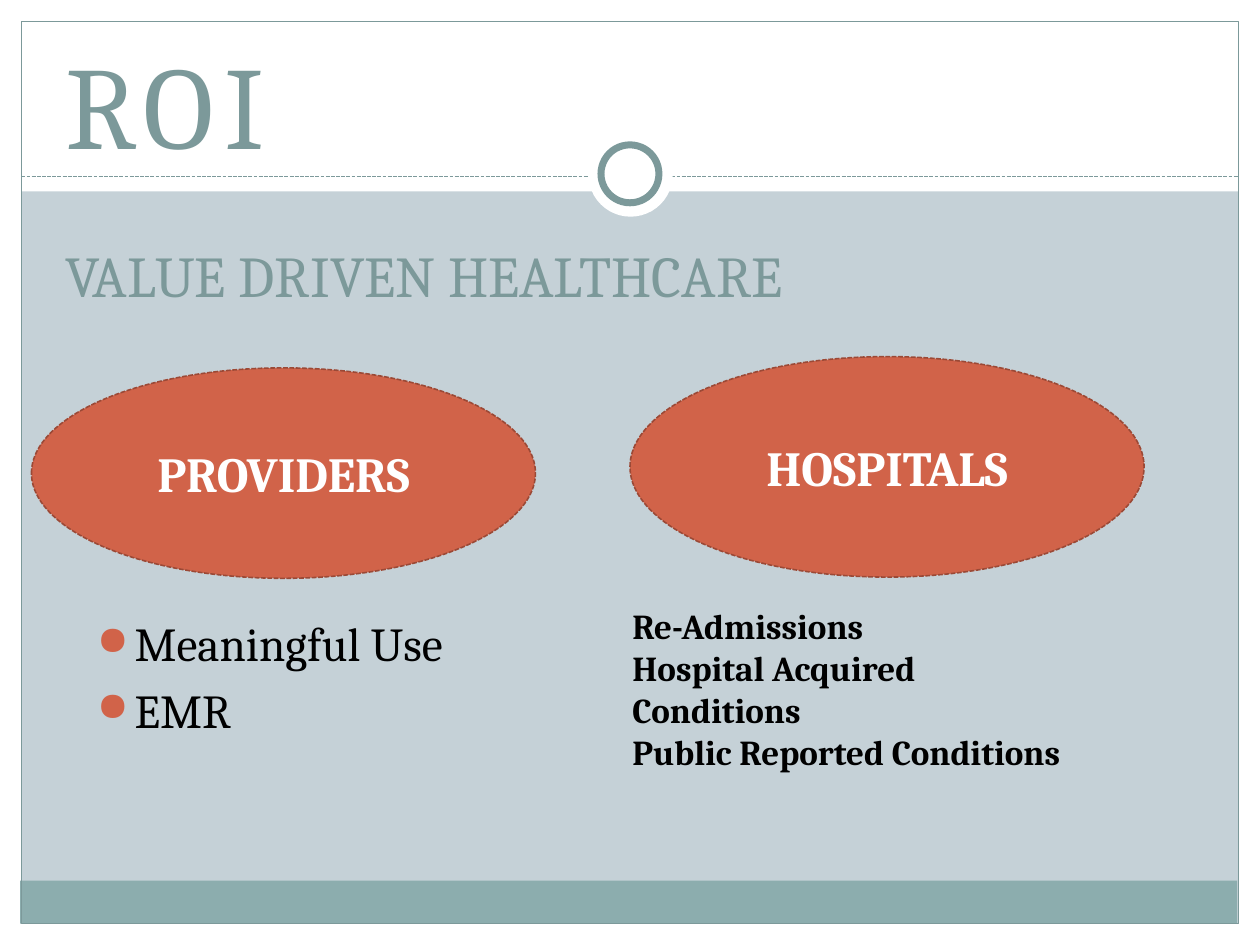
import pptx
import pptx.util
import pptx.dml.color
import pptx.enum.dml
import pptx.enum.shapes
import pptx.enum.text
import pptx.oxml
import pptx.oxml.ns

Inches = pptx.util.Inches
Pt = pptx.util.Pt
Shape = pptx.enum.shapes.MSO_SHAPE
Anchor = pptx.enum.text.MSO_ANCHOR
Align = pptx.enum.text.PP_ALIGN

COLORS = {
    "background": "C5D1D7",
    "white": "FFFFFF",
    "black": "000000",
    "teal": "7C999A",
    "footer": "8CADAE",
    "orange": "D16349",
    "rust": "9B4936",
}


class SlideBuilder:
    font = "Cambria"

    def __init__(self, slide):
        self.slide = slide
        slide.background.fill.solid()
        slide.background.fill.fore_color.rgb = self.color("background")

    def color(self, name):
        return pptx.dml.color.RGBColor.from_string(COLORS[name])

    def outline(self, line, color, width, dashed=False):
        line.color.rgb = self.color(color)
        line.width = Pt(width)
        if dashed:
            line.dash_style = pptx.enum.dml.MSO_LINE.SQUARE_DOT

    def shape(self, kind, box, fill=None, line=None):
        shape = self.slide.shapes.add_shape(kind, *map(Inches, box))
        shape.shadow.inherit = False
        if fill:
            shape.fill.solid()
            shape.fill.fore_color.rgb = self.color(fill)
        else:
            shape.fill.background()
        if line:
            self.outline(shape.line, *line)
        else:
            shape.line.fill.background()
        return shape

    def divider(self, left, right, top):
        connector = self.slide.shapes.add_connector(
            pptx.enum.shapes.MSO_CONNECTOR.STRAIGHT,
            Inches(left), Inches(top), Inches(right), Inches(top))
        self.outline(connector.line, "teal", 0.75, True)
        properties = connector._element.spPr
        properties.append(pptx.oxml.parse_xml(
            f'<a:effectLst {pptx.oxml.ns.nsdecls("a")}/>'))

    def paragraph(self, frame, text, size, color, bold=False,
                  align=Align.LEFT, before=0, spacing=0):
        paragraph = frame.paragraphs[0]
        if paragraph.runs:
            paragraph = frame.add_paragraph()
        paragraph.alignment = align
        paragraph.space_before = Pt(before)
        run = paragraph.add_run()
        run.text = text
        run.font.name = self.font
        run.font.size = Pt(size)
        run.font.bold = bold
        run.font.color.rgb = self.color(color)
        if spacing:
            run.font._element.set("spc", str(spacing * 100))
        return paragraph

    def text_box(self, box, anchor=Anchor.TOP):
        frame = self.slide.shapes.add_textbox(*map(Inches, box)).text_frame
        frame.word_wrap = True
        frame.vertical_anchor = anchor
        return frame

    def bullet(self, frame, text):
        paragraph = self.paragraph(frame, text, 27, "black", before=5.4)
        properties = paragraph._element.get_or_add_pPr()
        properties.set("marL", str(Inches(0.3)))
        properties.set("indent", str(-Inches(0.3)))
        namespace = pptx.oxml.ns.nsdecls("a")
        for xml in (
            f'<a:buClr {namespace}><a:srgbClr val="{COLORS["orange"]}"/></a:buClr>',
            f'<a:buSzPct {namespace} val="85000"/>',
            f'<a:buChar {namespace} char="●"/>',
        ):
            properties.append(pptx.oxml.parse_xml(xml))

    def oval(self, box, text):
        shape = self.shape(Shape.OVAL, box, "orange", ("rust", 0.9, True))
        frame = shape.text_frame
        frame.word_wrap = True
        frame.vertical_anchor = Anchor.MIDDLE
        self.paragraph(frame, text, 28, "white", True, Align.CENTER)


def main():
    presentation = pptx.Presentation()
    presentation.slide_width = Inches(10)
    presentation.slide_height = Inches(7.5)
    builder = SlideBuilder(
        presentation.slides.add_slide(presentation.slide_layouts[6]))

    margin = 0.17
    for box in (
        (0, 7.5 - margin, 10, margin),
        (0, 0, 10, 1.52),
        (0, 0, margin, 7.5),
        (10 - margin, 0, margin, 7.5),
    ):
        builder.shape(Shape.RECTANGLE, box, "white")
    builder.shape(Shape.RECTANGLE, (0.16, 6.99, 9.66, 0.34), "footer")
    builder.shape(Shape.RECTANGLE, (margin, margin, 9.66, 7.16),
                  line=("teal", 0.75))
    builder.divider(margin, 10 - margin, 1.4)
    builder.shape(Shape.OVAL, (4.67, 1.05, 0.67, 0.67), "white")
    builder.shape(Shape.OVAL, (4.77, 1.15, 0.46, 0.46), "white", ("teal", 4))

    title = builder.text_box((0.42, 0.17, 9, 2.33), Anchor.BOTTOM)
    builder.paragraph(title, "ROI", 67, "teal", spacing=6)
    builder.paragraph(title, "VALUE DRIVEN HEALTHCARE", 33, "teal", before=38)

    provider_list = builder.text_box((0.67, 4.83, 9, 3.87))
    for text in ("Meaningful Use", "EMR"):
        builder.bullet(provider_list, text)

    builder.oval((0.25, 2.92, 4, 1.67), "PROVIDERS")
    builder.oval((5, 2.83, 4.08, 1.75), "HOSPITALS")

    hospital_list = builder.text_box((4.92, 4.75, 3.83, 2.09))
    for text in ("Re-Admissions", "Hospital Acquired Conditions",
                 "Public Reported Conditions"):
        builder.paragraph(hospital_list, text, 20, "black", True)

    presentation.save("out.pptx")


if __name__ == "__main__":
    main()
